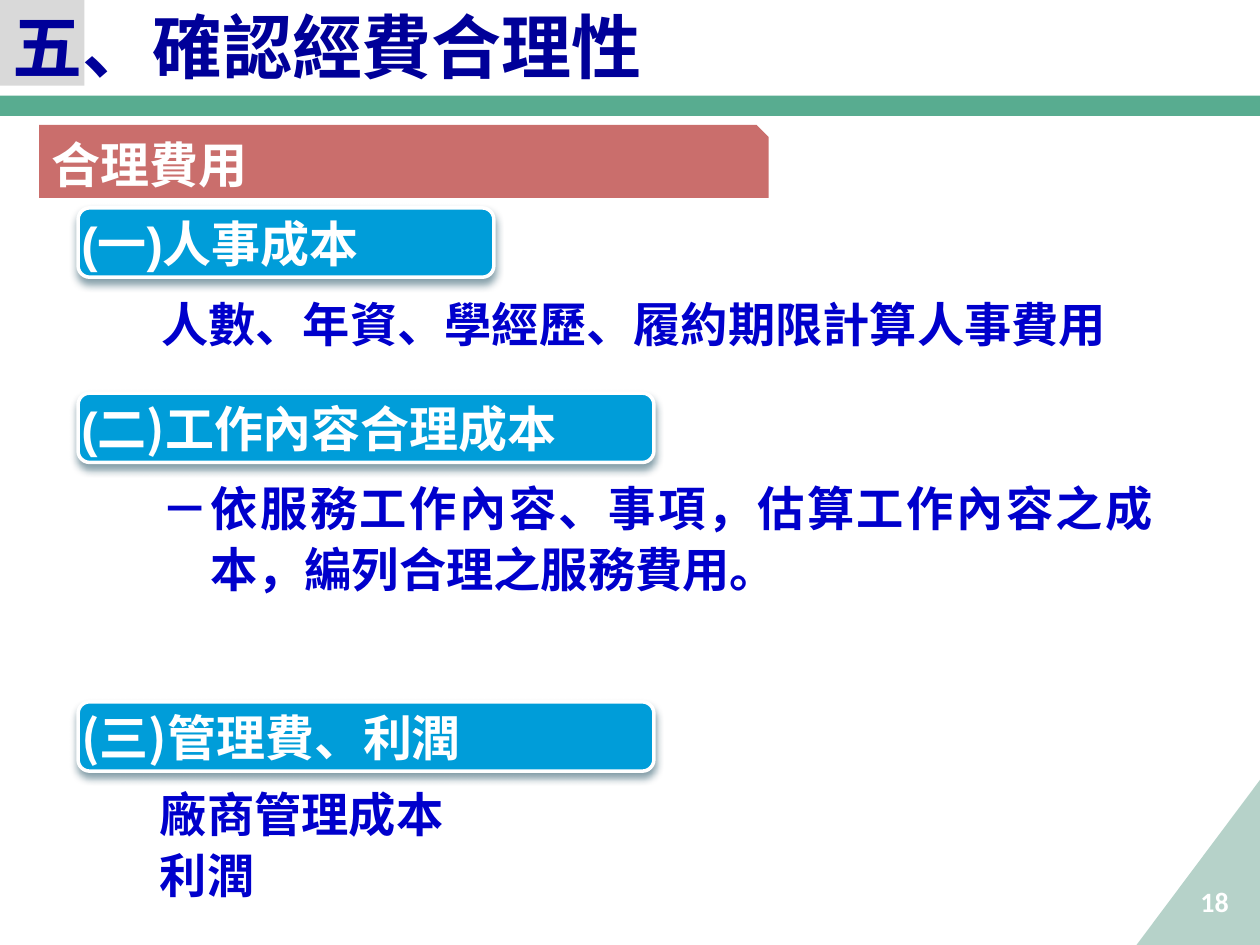
"""Build the slide on confirming that project costs are reasonable."""
from dataclasses import dataclass

from lxml import etree
from pptx import Presentation
from pptx import util as u
from pptx.dml.color import RGBColor
from pptx.enum import shapes, text
from pptx.oxml import parse_xml
from pptx.oxml.ns import nsdecls, qn

PX = 9144
CJK = "Noto Sans CJK SC"
COLORS = {
    "white": "FFFFFF", "corner": "D9D9D9", "title": "000099", "mint": "B6D2C9",
    "green": "58AC90", "body": "0000CC", "rose": "CA6E6C", "blue": "009DD9",
    "shade": "00374C",
}
FRAME = {"word_wrap": True, "vertical_anchor": text.MSO_ANCHOR.MIDDLE}
HEADING_FRAME = FRAME | {"margin_left": 0, "margin_right": 0,
                         "margin_top": 12 * PX, "margin_bottom": 12 * PX}
GROWING = {"auto_size": text.MSO_AUTO_SIZE.SHAPE_TO_FIT_TEXT}


@dataclass(frozen=True)
class Box:
    left: int
    top: int
    width: int
    height: int

    def emu(self) -> tuple:
        return tuple(n * PX for n in (self.left, self.top, self.width, self.height))


@dataclass(frozen=True)
class Heading:
    top: int
    width: int
    pieces: tuple


@dataclass(frozen=True)
class Detail:
    wording: str
    margin: int
    indent: int = 0
    blank_lines: int = 0


HEADINGS = (
    Heading(165, 330, (("(一)人事成本", "Arial"),)),
    Heading(312, 457, (("(", "Arial"), ("二)工作內容合理成本", CJK))),
    Heading(557, 457, (("(三)管理費、利潤", CJK),)),
)
DETAILS = (
    Detail("人數、年資、學經歷、履約期限計算人事費用", 118),
    Detail("－依服務工作內容、事項，估算工作內容之成本，編列合理之服務費用。", 157, -39, 2),
    Detail("廠商管理成本", 117, 0, 3),
    Detail("利潤", 117),
)


def apply(target, values: dict) -> None:
    """Set every named attribute on the target."""
    for name, value in values.items():
        setattr(target, name, value)


def rgb(name: str) -> RGBColor:
    """Look up a palette colour."""
    return RGBColor.from_string(COLORS[name])


def write(paragraph, wording: str, size: int, color: str, font: str = CJK) -> None:
    """Add a bold run with matching Latin and East Asian fonts."""
    run = paragraph.add_run()
    run.text = wording
    apply(run.font, {"name": font, "size": u.Pt(size), "bold": True})
    run.font.color.rgb = rgb(color)
    etree.SubElement(run.font._element, qn("a:ea"), typeface=CJK)


def draw(slide, kind, box: Box, fill: str):
    """Draw a flat preset shape without outline or shadow."""
    shape = slide.shapes.add_shape(kind, *box.emu())
    shape.shadow.inherit = False
    shape.fill.solid()
    shape.fill.fore_color.rgb = rgb(fill)
    shape.line.fill.background()
    return shape


def add_text(slide, box: Box, frame_format: dict):
    """Add a text box and return its frame."""
    frame = slide.shapes.add_textbox(*box.emu()).text_frame
    apply(frame, frame_format)
    return frame


def draw_heading(slide, heading: Heading) -> None:
    """Draw a raised blue heading bar."""
    bar = draw(slide, shapes.MSO_SHAPE.ROUNDED_RECTANGLE,
               Box(62, heading.top, heading.width, 55), "blue")
    bar.line.color.rgb = rgb("white")
    bar.line.width = u.Pt(2)
    bar._element.spPr.find(qn("a:effectLst")).append(parse_xml(
        f'<a:outerShdw {nsdecls("a")} blurRad="{u.Pt(4.5)}" dist="{u.Pt(3)}" '
        f'dir="5400000" rotWithShape="0"><a:srgbClr val="{COLORS["shade"]}">'
        '<a:alpha val="48000"/></a:srgbClr></a:outerShdw>'))
    apply(bar.text_frame, HEADING_FRAME)
    paragraph = bar.text_frame.paragraphs[0]
    paragraph.alignment = text.PP_ALIGN.LEFT
    for wording, font in heading.pieces:
        write(paragraph, wording, 28, "white", font)


def write_details(slide) -> None:
    """Write the explanations that sit below the headings."""
    frame = add_text(slide, Box(0, 226, 925, 547), {"word_wrap": True} | GROWING)
    for number, detail in enumerate(DETAILS):
        paragraph = frame.add_paragraph() if number else frame.paragraphs[0]
        apply(paragraph, {"alignment": text.PP_ALIGN.JUSTIFY,
                          "line_spacing": u.Pt(35),
                          "space_before": u.Pt(35 * detail.blank_lines)})
        properties = paragraph._p.get_or_add_pPr()
        properties.set("marL", str(detail.margin * PX))
        properties.set("indent", str(detail.indent * PX))
        write(paragraph, detail.wording, 27, "body")


def main() -> None:
    """Assemble and save the slide."""
    deck = Presentation()
    apply(deck, {"slide_width": 1000 * PX, "slide_height": 750 * PX})
    slide = deck.slides.add_slide(deck.slide_layouts[6])
    kinds = shapes.MSO_SHAPE

    draw(slide, kinds.RECTANGLE, Box(0, 0, 67, 68), "corner")
    title = add_text(slide, Box(0, -2, 977, 77), FRAME | GROWING)
    write(title.paragraphs[0], "五、確認經費合理性", 40, "title")

    fold = draw(slide, kinds.RIGHT_TRIANGLE, Box(902, 619, 98, 131), "mint")
    fold._element.spPr.xfrm.set("flipH", "1")
    draw(slide, kinds.RECTANGLE, Box(0, 76, 1000, 16), "green")
    page = add_text(slide, Box(752, 695, 233, 40), FRAME).paragraphs[0]
    page.alignment = text.PP_ALIGN.RIGHT
    write(page, "18", 16, "white", "Calibri")

    write_details(slide)
    topic = draw(slide, kinds.SNIP_1_RECTANGLE, Box(31, 99, 579, 58), "rose").text_frame
    apply(topic, FRAME)
    topic.paragraphs[0].alignment = text.PP_ALIGN.LEFT
    write(topic.paragraphs[0], "合理費用", 28, "white", "Calibri")
    for heading in HEADINGS:
        draw_heading(slide, heading)

    deck.save("out.pptx")


if __name__ == "__main__":
    main()
